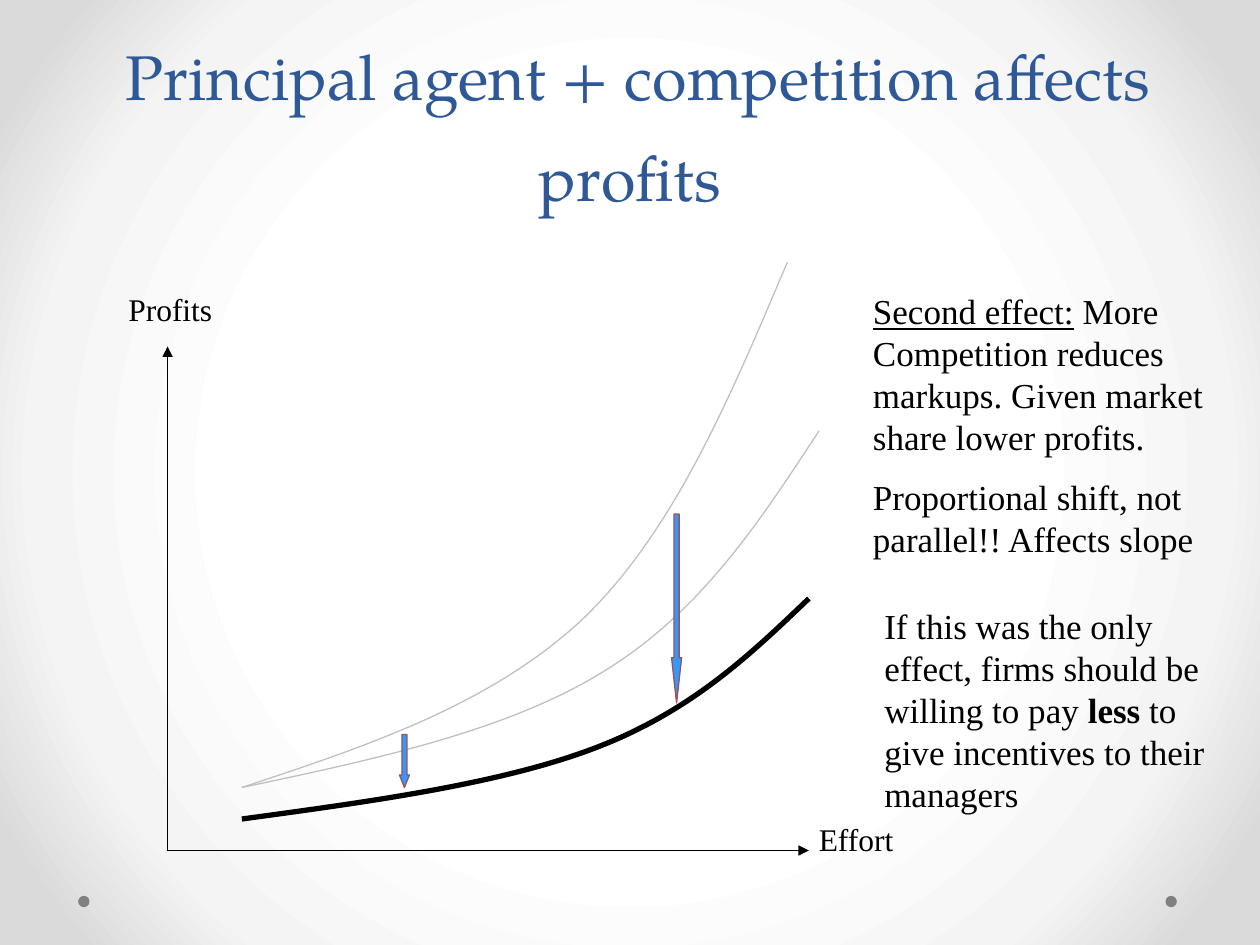
from lxml.etree import SubElement
from pptx import Presentation
from pptx.dml.color import RGBColor
from pptx.enum.shapes import MSO_CONNECTOR, MSO_SHAPE
from pptx.enum.text import MSO_ANCHOR, MSO_AUTO_SIZE, PP_ALIGN
from pptx.oxml.ns import qn
from pptx.util import Inches, Pt

BLACK = RGBColor(0x00, 0x00, 0x00)
TITLE_BLUE = RGBColor(0x2F, 0x58, 0x97)
ARROW_BLUE = RGBColor(0x33, 0x99, 0xFF)
ARROW_EDGE = RGBColor(0x9C, 0x52, 0x52)
CURVE_GRAY = RGBColor(0xC0, 0xC0, 0xC0)
DOT_GRAY = RGBColor(0x80, 0x80, 0x80)
BACKGROUND_STOPS = [
    (50, RGBColor(0xFF, 0xFF, 0xFF)),
    (76, RGBColor(0xF4, 0xF4, 0xF4)),
    (92, RGBColor(0xDA, 0xDA, 0xDA)),
]
TITLE_FONT = "TeX Gyre Pagella"
BODY_FONT = "Times New Roman"
ORIGIN = (1.33, 6.75)


def set_background(slide):
    """Fill the slide with a gradient that spreads from its centre."""
    fill = slide.background.fill
    fill.gradient()
    gradient = slide.background._cSld.find(".//" + qn("a:gradFill"))
    for child in list(gradient):
        gradient.remove(child)
    stops = SubElement(gradient, qn("a:gsLst"))
    for percent, color in BACKGROUND_STOPS:
        stop = SubElement(stops, qn("a:gs"), pos=str(percent * 1000))
        SubElement(stop, qn("a:srgbClr"), val=str(color))
    circle = SubElement(gradient, qn("a:path"), {"path": "circle"})
    SubElement(circle, qn("a:fillToRect"), l="50000", t="50000", r="50000", b="50000")


def add_run(paragraph, text, font=BODY_FONT, size=20, color=BLACK,
            bold=False, underline=False):
    run = paragraph.add_run()
    run.text = text
    run.font.name = font
    run.font.size = Pt(size)
    run.font.color.rgb = color
    run.font.bold = bold
    run.font.underline = underline


def set_title(slide, text):
    title = slide.shapes.title
    title.left, title.top = Inches(0.5), Inches(0)
    title.width, title.height = Inches(9), Inches(1.75)
    frame = title.text_frame
    frame.auto_size = MSO_AUTO_SIZE.NONE
    frame.vertical_anchor = MSO_ANCHOR.BOTTOM
    paragraph = frame.paragraphs[0]
    paragraph.alignment = PP_ALIGN.CENTER
    paragraph.line_spacing = Pt(58)
    add_run(paragraph, text, font=TITLE_FONT, size=36, color=TITLE_BLUE)


def add_text(slide, left, top, width, height, paragraphs, wrap=True, size=20):
    """Add a text box; each paragraph is a list of (text, run format) pairs."""
    box = slide.shapes.add_textbox(Inches(left), Inches(top), Inches(width), Inches(height))
    frame = box.text_frame
    frame.word_wrap = wrap
    frame.auto_size = MSO_AUTO_SIZE.SHAPE_TO_FIT_TEXT
    for index, runs in enumerate(paragraphs):
        paragraph = frame.add_paragraph() if index else frame.paragraphs[0]
        if index:
            paragraph.space_before = Pt(10)
        for text, run_format in runs:
            add_run(paragraph, text, size=size, **run_format)


def add_axis(slide, end):
    points = [Inches(value) for value in (*ORIGIN, *end)]
    axis = slide.shapes.add_connector(MSO_CONNECTOR.STRAIGHT, *points)
    axis.line.color.rgb = BLACK
    axis.line.width = Pt(0.75)
    SubElement(axis.line._get_or_add_ln(), qn("a:tailEnd"), type="triangle")
    SubElement(axis._element.spPr, qn("a:effectLst"))


def add_curve(slide, points, color, width):
    """Draw a smooth curve from a start point and triples of Bezier points."""
    start, *controls = [(Inches(x), Inches(y)) for x, y in points]
    builder = slide.shapes.build_freeform(*start)
    builder.add_line_segments(controls, close=False)
    curve = builder.convert_to_shape()
    curve.shadow.inherit = False
    curve.fill.background()
    curve.line.color.rgb = color
    curve.line.width = Pt(width)
    outline = curve._element.find(".//" + qn("a:pathLst"))[0]
    segments = outline.findall(qn("a:lnTo"))
    for first in range(0, len(segments), 3):
        bezier = SubElement(outline, qn("a:cubicBezTo"))
        for segment in segments[first:first + 3]:
            bezier.append(segment[0])
            outline.remove(segment)


def add_filled_shape(slide, kind, left, top, width, height, fill, edge=None):
    shape = slide.shapes.add_shape(
        kind, Inches(left), Inches(top), Inches(width), Inches(height))
    shape.shadow.inherit = False
    shape.fill.solid()
    shape.fill.fore_color.rgb = fill
    if edge is None:
        shape.line.fill.background()
    else:
        shape.line.color.rgb = edge
        shape.line.width = Pt(0.75)
    return shape


def add_down_arrow(slide, left, top, height, head_ratio):
    arrow = add_filled_shape(slide, MSO_SHAPE.DOWN_ARROW, left, top, 0.08, height,
                             ARROW_BLUE, ARROW_EDGE)
    arrow.adjustments[0] = 0.5
    arrow.adjustments[1] = head_ratio


def main():
    presentation = Presentation()
    presentation.slide_width, presentation.slide_height = Inches(10), Inches(7.5)
    slide = presentation.slides.add_slide(presentation.slide_layouts[5])
    set_background(slide)
    for left in (9.25, 0.62):
        add_filled_shape(slide, MSO_SHAPE.OVAL, left, 7.11, 0.09, 0.09, DOT_GRAY)
    set_title(slide, " Principal agent + competition affects profits")

    add_axis(slide, (1.33, 2.75))
    add_axis(slide, (6.42, 6.75))
    add_text(slide, 0.92, 2.25, 0.87, 0.4, [[("Profits", {})]], wrap=False, size=18)
    add_text(slide, 6.4, 6.46, 0.8, 0.4, [[("Effort", {})]], wrap=False, size=18)

    add_curve(slide, [(1.92, 6.25), (2.97, 6.03), (4.03, 5.8), (4.79, 5.33),
                      (5.56, 4.86), (6.03, 4.14), (6.5, 3.42)], CURVE_GRAY, 0.75)
    add_curve(slide, [(1.92, 6.25), (2.92, 5.92), (3.91, 5.59), (4.64, 4.9),
                      (5.36, 4.2), (5.8, 3.14), (6.25, 2.08)], CURVE_GRAY, 0.75)
    add_curve(slide, [(1.92, 6.5), (2.95, 6.36), (3.99, 6.22), (4.74, 5.93),
                      (5.49, 5.64), (5.95, 5.2), (6.42, 4.75)], BLACK, 3)

    add_down_arrow(slide, 3.17, 5.83, 0.42, head_ratio=1.25)
    add_text(slide, 6.83, 2.25, 2.92, 2.27, [
        [("Second effect:", {"underline": True}),
         (" More Competition reduces markups. Given market share lower profits.", {})],
        [("Proportional shift, not parallel!! Affects slope", {})],
    ])
    add_text(slide, 6.92, 4.75, 2.83, 1.77, [
        [("If this was the only effect, firms should be willing to pay", {}),
         (" less", {"bold": True}),
         (" to give incentives to their managers", {})],
    ])
    add_down_arrow(slide, 5.33, 4.08, 1.5, head_ratio=4.5)
    presentation.save("out.pptx")


if __name__ == "__main__":
    main()
